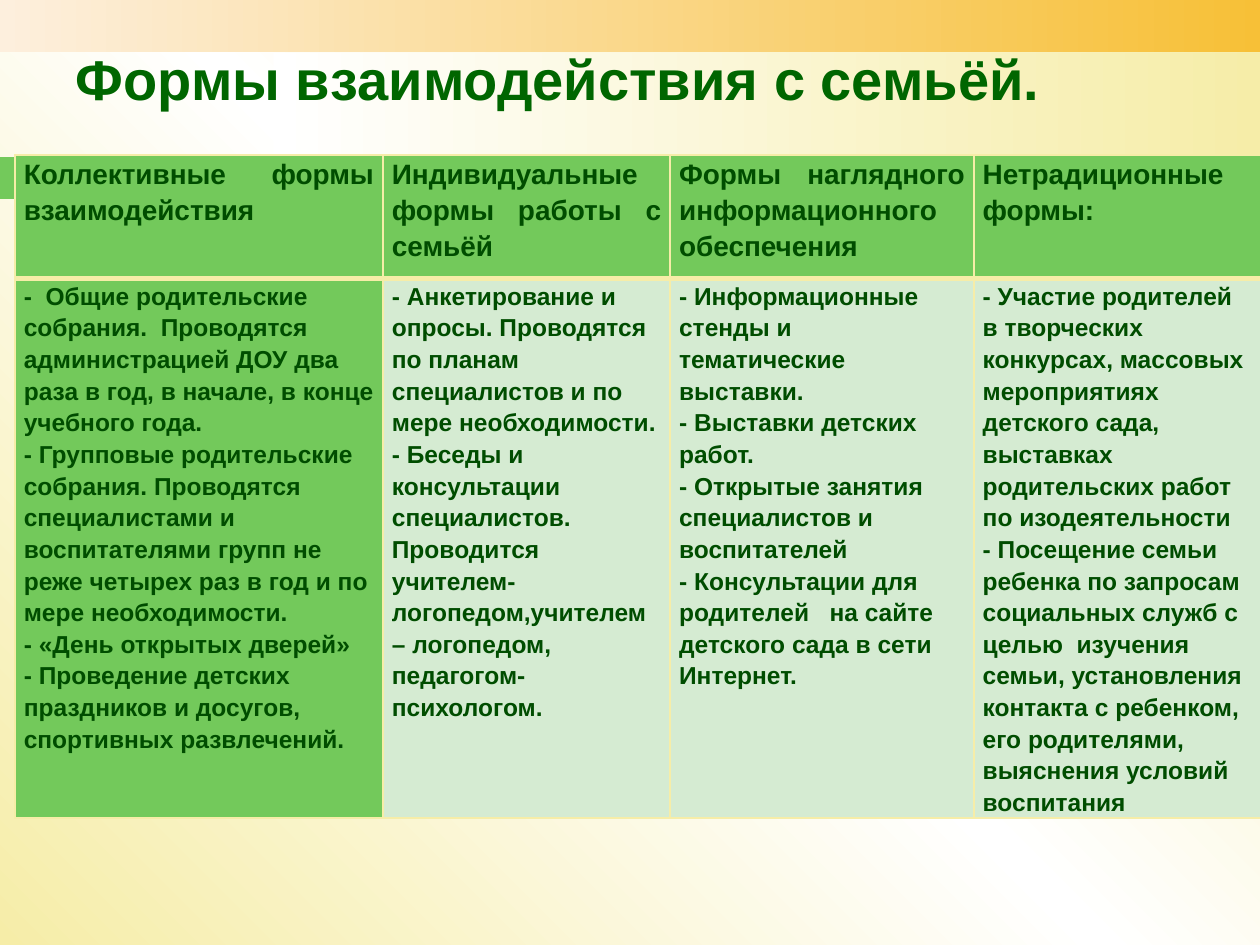
import copy

import pptx
import pptx.dml.color
import pptx.enum.shapes
import pptx.enum.text
import pptx.oxml
import pptx.oxml.ns
import pptx.util
from lxml import etree

Cm = pptx.util.Cm
Pt = pptx.util.Pt
RGBColor = pptx.dml.color.RGBColor
ALIGN = pptx.enum.text.PP_ALIGN
ANCHOR = pptx.enum.text.MSO_ANCHOR

# Colours
CREAM = RGBColor(0xF6, 0xED, 0xA8)
WHITE = RGBColor(0xFF, 0xFF, 0xFF)
PEACH = RGBColor(0xFD, 0xEF, 0xDD)
AMBER = RGBColor(0xF7, 0xC0, 0x37)
GREEN = RGBColor(0x73, 0xC9, 0x5B)
PALE_GREEN = RGBColor(0xD5, 0xEB, 0xD2)
TITLE_GREEN = RGBColor(0x00, 0x66, 0x00)
TEXT_GREEN = RGBColor(0x00, 0x4D, 0x00)

# Content
TITLE = "Формы взаимодействия с семьёй."
COLUMNS = [
    ("Коллективные формы взаимодействия", 7.42, [
        "-  Общие родительские собрания.  Проводятся администрацией ДОУ два раза в год, "
        "в начале, в конце учебного года.",
        "- Групповые родительские собрания. Проводятся специалистами и воспитателями групп "
        "не реже четырех раз в год и по мере необходимости.",
        "- «День открытых дверей»",
        "- Проведение детских праздников и досугов, спортивных развлечений.",
    ]),
    ("Индивидуальные формы работы с семьёй", 5.79, [
        "- Анкетирование и опросы. Проводятся по планам специалистов и по мере необходимости.",
        "- Беседы и консультации специалистов. Проводится учителем-логопедом,учителем "
        "– логопедом, педагогом-психологом.",
    ]),
    ("Формы наглядного информационного обеспечения", 6.12, [
        "- Информационные стенды и тематические выставки.",
        "- Выставки детских работ.",
        "- Открытые занятия специалистов и воспитателей",
        "- Консультации для родителей   на сайте детского сада в сети Интернет.",
    ]),
    ("Нетрадиционные формы:", 5.79, [
        "- Участие родителей в творческих конкурсах, массовых мероприятиях детского сада, "
        "выставках родительских работ по изодеятельности",
        "- Посещение семьи ребенка по запросам социальных служб с целью  изучения семьи, "
        "установления контакта с ребенком, его родителями, выяснения условий воспитания",
    ]),
]
ROW_HEIGHTS = [2.5, 10.87]

# Bands: left, top, width, height in cm, then one colour or a gradient pair
BANDS = [
    (0, 0, 25.4, 1.06, [PEACH, AMBER]),
    (5.51, 1.06, 19.89, 2.11, [WHITE, CREAM]),
    (0, 3.17, 25.4, 0.84, [GREEN]),
]


def set_gradient(fill, colors, angle):
    """Spread the colours evenly; the angle runs counter-clockwise."""
    fill.gradient()
    fill.gradient_angle = angle
    stop_list = fill.gradient_stops[0]._gs.getparent()
    while len(stop_list) < len(colors):
        stop_list.append(copy.deepcopy(stop_list[0]))
    for index, (stop, color) in enumerate(zip(fill.gradient_stops, colors)):
        stop.color.rgb = color
        stop.position = index / (len(colors) - 1)


def write_text(text_frame, texts, size, color, align=ALIGN.LEFT, spacing=1.15):
    text_frame.word_wrap = True
    for index, text in enumerate(texts):
        paragraph = text_frame.add_paragraph() if index else text_frame.paragraphs[0]
        paragraph.alignment = align
        paragraph.line_spacing = spacing
        paragraph.space_before = paragraph.space_after = Pt(0)
        run = paragraph.add_run()
        run.text = text
        run.font.name = "Arial"
        run.font.size = Pt(size)
        run.font.bold = True
        run.font.color.rgb = color


def set_borders(cell, color, widths):
    """Widths in points for left, right, top and bottom."""
    properties = cell._tc.get_or_add_tcPr()
    for index, (side, width) in enumerate(zip("LRTB", widths)):
        properties.insert(index, pptx.oxml.parse_xml(
            f'<a:ln{side} {pptx.oxml.ns.nsdecls("a")} w="{Pt(width)}">'
            f'<a:solidFill><a:srgbClr val="{color}"/></a:solidFill></a:ln{side}>'))


def main():
    presentation = pptx.Presentation()
    presentation.slide_width = Cm(25.4)
    presentation.slide_height = Cm(19.05)
    slide = presentation.slides.add_slide(presentation.slide_layouts[5])
    set_gradient(slide.background.fill, [CREAM, WHITE, CREAM], 45)

    # Bands across the top
    for left, top, width, height, colors in BANDS:
        band = slide.shapes.add_shape(
            pptx.enum.shapes.MSO_SHAPE.RECTANGLE, Cm(left), Cm(top), Cm(width), Cm(height))
        band.shadow.inherit = False
        band.line.fill.background()
        if len(colors) > 1:
            set_gradient(band.fill, colors, 0)
        else:
            band.fill.solid()
            band.fill.fore_color.rgb = colors[0]

    # Title, brought in front of the bands
    title = slide.shapes.title
    title.element.getparent().append(title.element)
    title.left, title.top, title.width, title.height = Cm(1.27), Cm(1.06), Cm(22.86), Cm(2.46)
    title.text_frame.vertical_anchor = ANCHOR.TOP
    title.text_frame.margin_top = 0
    title.text_frame.auto_size = pptx.enum.text.MSO_AUTO_SIZE.NONE
    write_text(title.text_frame, [TITLE], 32, TITLE_GREEN, spacing=0.9)

    # Table
    table = slide.shapes.add_table(
        len(ROW_HEIGHTS), len(COLUMNS), Cm(0.3), Cm(3.12),
        Cm(sum(width for _, width, _ in COLUMNS)), Cm(sum(ROW_HEIGHTS))).table
    for row, height in zip(table.rows, ROW_HEIGHTS):
        row.height = Cm(height)
    for index, (heading, width, items) in enumerate(COLUMNS):
        table.columns[index].width = Cm(width)
        head, body = table.cell(0, index), table.cell(1, index)
        write_text(head.text_frame, [heading], 16, TEXT_GREEN, align=ALIGN.JUSTIFY)
        write_text(body.text_frame, items, 14, TEXT_GREEN)
        body_color = PALE_GREEN if index else GREEN
        for cell, color, borders in ((head, GREEN, (1, 1, 1, 3)), (body, body_color, (1, 1, 3, 1))):
            cell.margin_left = cell.margin_right = Cm(0.18)
            cell.margin_top = cell.margin_bottom = 0
            cell.fill.solid()
            cell.fill.fore_color.rgb = color
            set_borders(cell, CREAM, borders)

    presentation.save("out.pptx")


if __name__ == "__main__":
    main()
